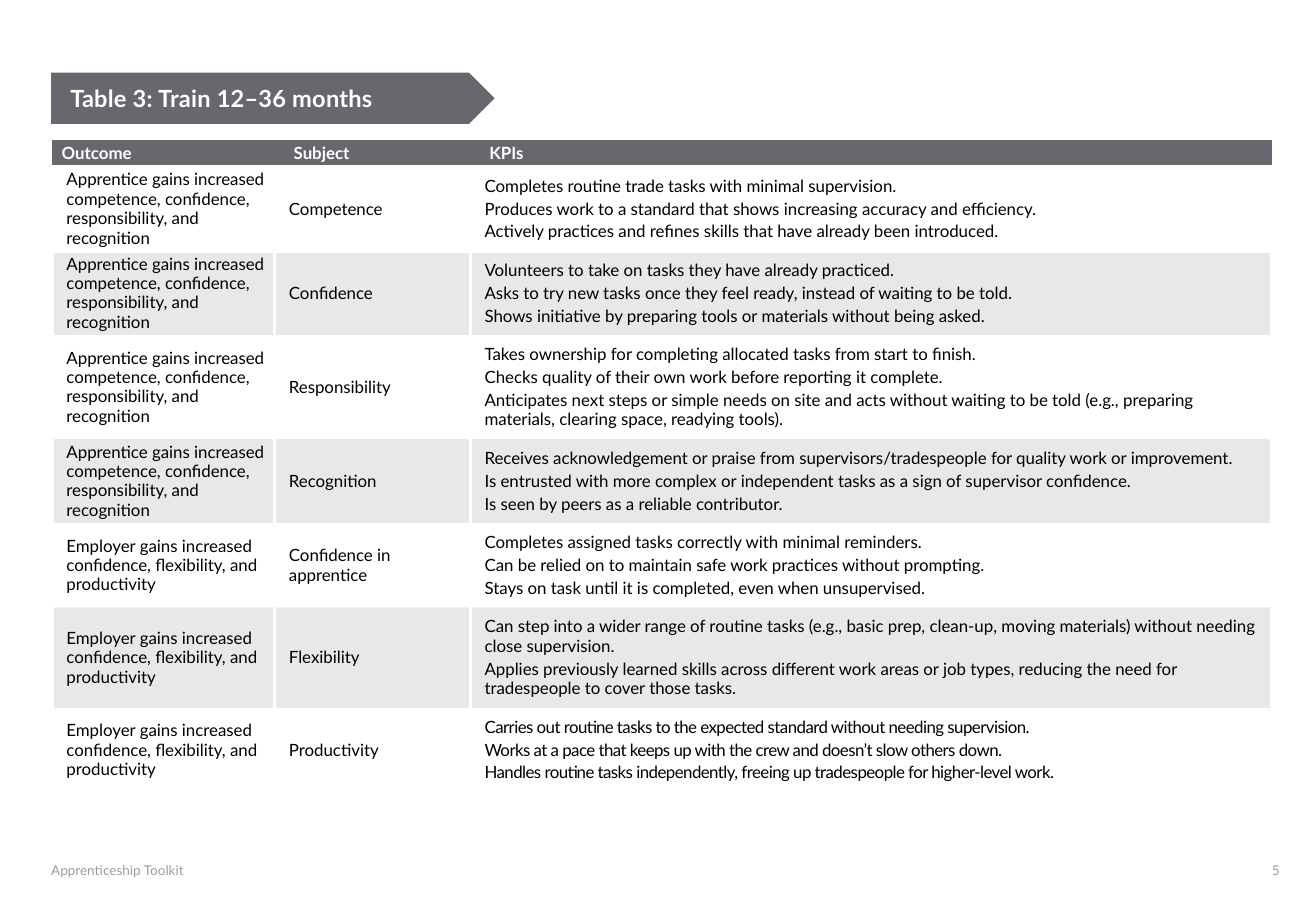
"""Builds the slide with the outcomes, subjects and KPIs of training months 12–36."""
import lxml.etree
import pptx
import pptx.dml.color
import pptx.enum.shapes
import pptx.enum.text
import pptx.oxml.ns
import pptx.util

Cm = pptx.util.Cm
Pt = pptx.util.Pt
qn = pptx.oxml.ns.qn
COLOURS = {"slate": "66686D", "white": "FFFFFF", "black": "000000", "footer": "9B9DA1"}
NO_STYLE = "{2D5ABB26-0587-4C30-8999-92F81FD0307C}"

APPRENTICE = "Apprentice gains increased competence, confidence, responsibility, and recognition"
EMPLOYER = "Employer gains increased confidence, flexibility, and productivity"
HEADINGS = ["Outcome", "Subject", "KPIs"]
ROWS = [
    (APPRENTICE, "Competence", [
        "Completes routine trade tasks with minimal supervision.",
        "Produces work to a standard that shows increasing accuracy and efficiency.",
        "Actively practices and refines skills that have already been introduced."]),
    (APPRENTICE, "Confidence", [
        "Volunteers to take on tasks they have already practiced.",
        "Asks to try new tasks once they feel ready, instead of waiting to be told.",
        "Shows initiative by preparing tools or materials without being asked."]),
    (APPRENTICE, "Responsibility", [
        "Takes ownership for completing allocated tasks from start to finish.",
        "Checks quality of their own work before reporting it complete.",
        "Anticipates next steps or simple needs on site and acts without waiting to be told "
        "(e.g., preparing materials, clearing space, readying tools)."]),
    (APPRENTICE, "Recognition", [
        "Receives acknowledgement or praise from supervisors/tradespeople for quality work "
        "or improvement.",
        "Is entrusted with more complex or independent tasks as a sign of supervisor confidence.",
        "Is seen by peers as a reliable contributor."]),
    (EMPLOYER, "Confidence in apprentice", [
        "Completes assigned tasks correctly with minimal reminders.",
        "Can be relied on to maintain safe work practices without prompting.",
        "Stays on task until it is completed, even when unsupervised."]),
    (EMPLOYER, "Flexibility", [
        "Can step into a wider range of routine tasks (e.g., basic prep, clean-up, moving "
        "materials) without needing close supervision.",
        "Applies previously learned skills across different work areas or job types, reducing "
        "the need for tradespeople to cover those tasks."]),
    (EMPLOYER, "Productivity", [
        "Carries out routine tasks to the expected standard without needing supervision.",
        "Works at a pace that keeps up with the crew and doesn’t slow others down.",
        "Handles routine tasks independently, freeing up tradespeople for higher-level work."]),
]
ROW_HEIGHTS = [0.57, 1.76, 1.76, 2.17, 1.76, 1.76, 2.1, 1.76]
COLUMN_WIDTHS = [4.65, 4.09, 16.76]


def write(frame, lines, size=10, colour="black", bold=False, before=0, after=0,
          leading=None, indent=0, spacing=0):
    """Fill a text frame with one paragraph for each line."""
    for index, line in enumerate(lines):
        para = frame.paragraphs[0] if index == 0 else frame.add_paragraph()
        para.space_before, para.space_after = Pt(before), Pt(after)
        if leading:
            para.line_spacing = Pt(leading)
        if indent:
            para._p.get_or_add_pPr().set("marL", str(Cm(indent)))
        span = para.add_run()
        span.text = line
        span.font.name, span.font.size, span.font.bold = "Lato", Pt(size), bold
        span.font.color.rgb = pptx.dml.color.RGBColor.from_string(COLOURS[colour])
        if spacing:
            span._r.get_or_add_rPr().set("spc", str(spacing))


def paint_cell(cell, colour, borders, alpha=None):
    """Fill a cell and draw white lines on the given sides."""
    cell.fill.solid()
    cell.fill.fore_color.rgb = pptx.dml.color.RGBColor.from_string(COLOURS[colour])
    properties = cell._tc.get_or_add_tcPr()
    if alpha:
        tint = properties.find(".//" + qn("a:srgbClr"))
        lxml.etree.SubElement(tint, qn("a:alpha"), val=str(alpha * 1000))
    for position, side in enumerate(borders):
        line = lxml.etree.Element(qn("a:ln" + side), w=str(Pt(2.25)))
        paint = lxml.etree.SubElement(line, qn("a:solidFill"))
        lxml.etree.SubElement(paint, qn("a:srgbClr"), val=COLOURS["white"])
        properties.insert(position, line)


deck = pptx.Presentation()
deck.slide_width, deck.slide_height = Cm(27.51), Cm(19.05)
page = deck.slides.add_slide(deck.slide_layouts[6])

banner = page.shapes.add_shape(pptx.enum.shapes.MSO_SHAPE.PENTAGON,
                               Cm(1.07), Cm(1.52), Cm(9.27), Cm(1.07))
banner.shadow.inherit = False
banner.fill.solid()
banner.fill.fore_color.rgb = pptx.dml.color.RGBColor.from_string(COLOURS["slate"])
banner.line.fill.background()

table = page.shapes.add_table(len(ROWS) + 1, len(HEADINGS), Cm(1.09), Cm(2.92),
                              Cm(sum(COLUMN_WIDTHS)), Cm(sum(ROW_HEIGHTS))).table
table.horz_banding = False
table._tbl.tblPr.find(qn("a:tableStyleId")).text = NO_STYLE
for column, width in zip(table.columns, COLUMN_WIDTHS):
    column.width = Cm(width)
for row, height in zip(table.rows, ROW_HEIGHTS):
    row.height = Cm(height)

for column, heading in enumerate(HEADINGS):
    cell = table.cell(0, column)
    cell.vertical_anchor = pptx.enum.text.MSO_ANCHOR.MIDDLE
    cell.margin_left = Cm(0.2 if column else 0)
    cell.margin_right = cell.margin_top = cell.margin_bottom = Cm(0.03)
    write(cell.text_frame, [heading], colour="white", bold=True, before=6, after=6, indent=0.2)
    paint_cell(cell, "slate", "B")

for row, (outcome, subject, kpis) in enumerate(ROWS, start=1):
    last = row == len(ROWS)
    for column, lines in enumerate([[outcome], [subject], kpis]):
        cell = table.cell(row, column)
        is_kpi = column == 2
        cell.vertical_anchor = pptx.enum.text.MSO_ANCHOR.MIDDLE
        cell.margin_left = Cm(0.1)
        cell.margin_right = Cm(0 if is_kpi and last else 0.1)
        cell.margin_top = cell.margin_bottom = Cm([0.03, 0.13, 0.2][column])
        write(cell.text_frame, lines, before=0 if is_kpi else 6, after=2 if is_kpi else 6,
              leading=11.5, indent=0.2, spacing=-30 if is_kpi and last else 0)
        borders = "LRT" if row == 1 else "LR"
        if row % 2:
            paint_cell(cell, "white", borders)
        else:
            paint_cell(cell, "slate", borders, alpha=15)

LABELS = [
    ("Table 3: Train 12–36 months", (1.47, 1.75, 8.89, 0.61),
     dict(size=14, colour="white", bold=True, before=6, after=6, spacing=10)),
    ("Apprenticeship Toolkit", (1.07, 18.03, 5.56, 0.46), dict(size=8, colour="footer")),
    ("5", (26.59, 18.03, 0.91, 0.28), dict(size=8, colour="footer")),
]
for text, place, style in LABELS:
    box = page.shapes.add_textbox(*[Cm(length) for length in place])
    frame = box.text_frame
    frame.word_wrap = True
    frame.margin_left = frame.margin_right = frame.margin_top = frame.margin_bottom = 0
    write(frame, [text], **style)

deck.save("out.pptx")
